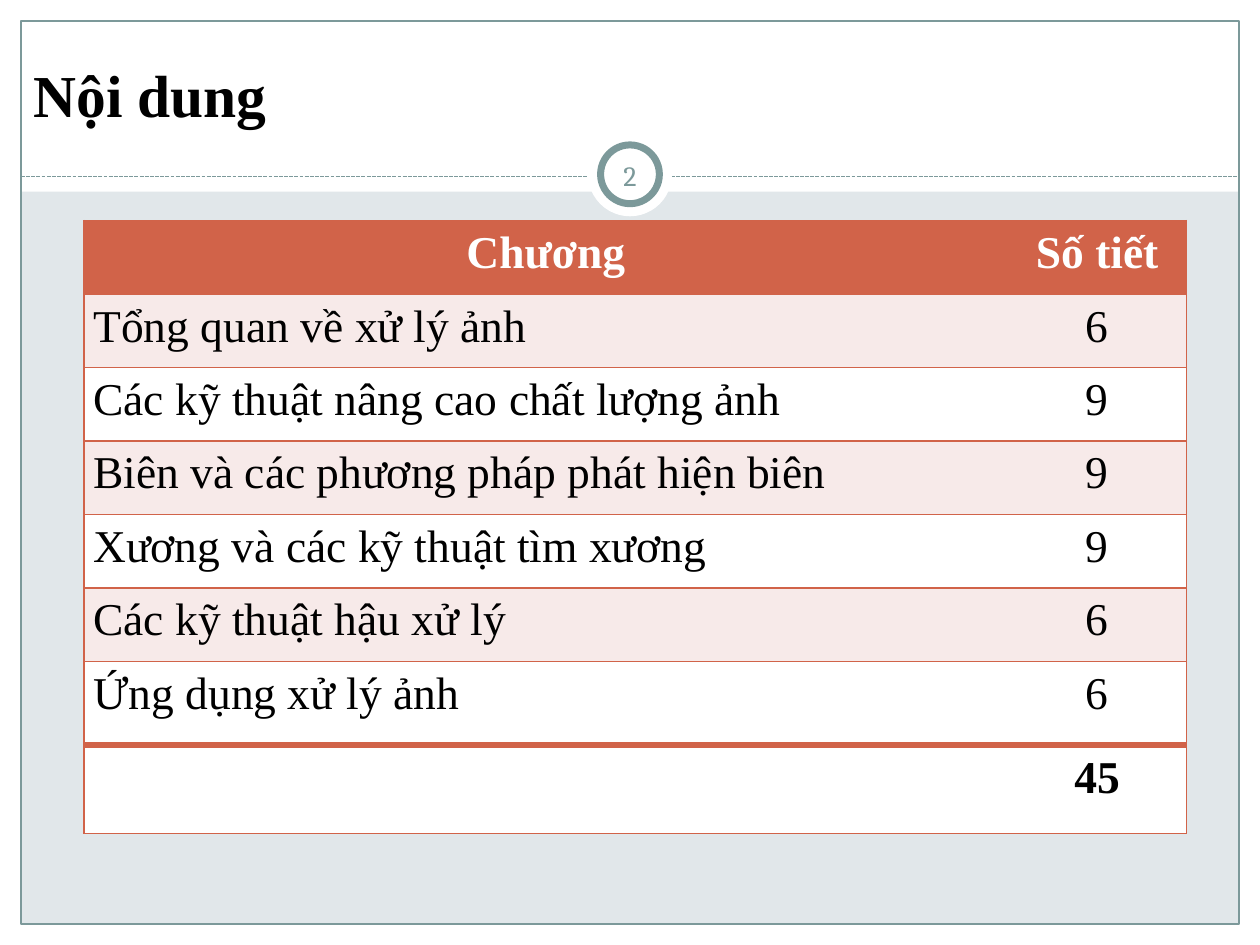
"""Build the course contents slide with its table of chapters and lesson counts."""
import dataclasses

import lxml.etree
import pptx
import pptx.dml.color
import pptx.enum.dml
import pptx.enum.shapes
import pptx.enum.text
import pptx.oxml.ns
import pptx.util

Pt = pptx.util.Pt
RGBColor = pptx.dml.color.RGBColor
Align = pptx.enum.text.PP_ALIGN
Anchor = pptx.enum.text.MSO_ANCHOR
Kind = pptx.enum.shapes.MSO_SHAPE
qn = pptx.oxml.ns.qn


@dataclasses.dataclass(frozen=True)
class Theme:
    background: str = "E1E7EA"
    white: str = "FFFFFF"
    black: str = "000000"
    frame: str = "7C999A"
    accent: str = "D16349"
    band: str = "F7EAE9"
    font: str = "Times New Roman"
    number_font: str = "Cambria"
    title_size: float = 34
    table_size: float = 26
    number_size: float = 16


theme = Theme()


def format_text(text_frame, font, size, color, bold, alignment):
    paragraph = text_frame.paragraphs[0]
    paragraph.alignment = alignment
    for run in paragraph.runs:
        run.font.name = font
        run.font.size = Pt(size)
        run.font.bold = bold
        run.font.color.rgb = RGBColor.from_string(color)
    return paragraph


def set_borders(cell, widths):
    properties = cell._tc.get_or_add_tcPr()
    for position, (side, width) in enumerate(widths.items()):
        line = lxml.etree.Element(qn(f"a:ln{side}"), w=str(Pt(width)))
        properties.insert(position, line)
        if width:
            fill = lxml.etree.SubElement(line, qn("a:solidFill"))
            lxml.etree.SubElement(fill, qn("a:srgbClr"), val=theme.accent)
        else:
            lxml.etree.SubElement(line, qn("a:noFill"))


presentation = pptx.Presentation()
presentation.slide_width = Pt(720)
presentation.slide_height = Pt(540)
slide = presentation.slides.add_slide(presentation.slide_layouts[5])
slide.background.fill.solid()
slide.background.fill.fore_color.rgb = RGBColor.from_string(theme.background)

decorations = [
    (Kind.RECTANGLE, (0, 528, 720, 12), theme.white, 0),
    (Kind.RECTANGLE, (0, 0, 720, 109.5), theme.white, 0),
    (Kind.RECTANGLE, (0, 0, 12, 540), theme.white, 0),
    (Kind.RECTANGLE, (708, 0, 12, 540), theme.white, 0),
    (Kind.RECTANGLE, (12, 12, 696, 516), None, 0.75),
    (Kind.OVAL, (336, 75.6, 48, 48), theme.white, 0),
    (Kind.OVAL, (343.2, 82.8, 33.6, 33.6), theme.white, 4),
]
for kind, box, fill_color, line_width in decorations:
    if kind == Kind.OVAL and not line_width:
        divider = slide.shapes.add_connector(
            pptx.enum.shapes.MSO_CONNECTOR.STRAIGHT, Pt(12), Pt(100.8), Pt(708), Pt(100.8))
        divider.line.color.rgb = RGBColor.from_string(theme.frame)
        divider.line.width = Pt(0.75)
        divider.line.dash_style = pptx.enum.dml.MSO_LINE.SQUARE_DOT
        lxml.etree.SubElement(divider.element.spPr, qn("a:effectLst"))
    shape = slide.shapes.add_shape(kind, *map(Pt, box))
    shape.shadow.inherit = False
    if fill_color:
        shape.fill.solid()
        shape.fill.fore_color.rgb = RGBColor.from_string(fill_color)
    else:
        shape.fill.background()
    if line_width:
        shape.line.color.rgb = RGBColor.from_string(theme.frame)
        shape.line.width = Pt(line_width)
    else:
        shape.line.fill.background()

title = slide.shapes.title
slide.shapes.element.append(title.element)
title.left, title.top, title.width, title.height = map(Pt, (12, 12, 696, 65.5))
title.text_frame.text = "Nội dung"
title.text_frame.vertical_anchor = Anchor.BOTTOM
format_text(title.text_frame, theme.font, theme.title_size, theme.black, True, Align.LEFT)

chapters = [
    ("Chương", "Số tiết"),
    ("Tổng quan về xử lý ảnh", "6"),
    ("Các kỹ thuật nâng cao chất lượng ảnh", "9"),
    ("Biên và các phương pháp phát hiện biên", "9"),
    ("Xương và các kỹ thuật tìm xương", "9"),
    ("Các kỹ thuật hậu xử lý", "6"),
    ("Ứng dụng xử lý ảnh", "6"),
    ("", "45"),
]
column_widths = [528, 102]
row_heights = [42] * 6 + [48, 50.4]
total_row = len(chapters) - 1
table = slide.shapes.add_table(
    len(chapters), 2, Pt(48), Pt(126), Pt(sum(column_widths)), Pt(sum(row_heights))).table
table.first_row = False
table.horz_banding = False
for column, width in zip(table.columns, column_widths):
    column.width = Pt(width)

for row_index, (values, height) in enumerate(zip(chapters, row_heights)):
    table.rows[row_index].height = Pt(height)
    is_header = row_index == 0
    is_total = row_index == total_row
    if is_header:
        fill_color = theme.accent
    else:
        fill_color = theme.band if row_index % 2 and not is_total else theme.white
    for column_index, value in enumerate(values):
        cell = table.cell(row_index, column_index)
        cell.margin_left = cell.margin_right = Pt(5.4)
        cell.margin_top = cell.margin_bottom = Pt(0)
        cell.fill.solid()
        cell.fill.fore_color.rgb = RGBColor.from_string(fill_color)
        cell.text_frame.text = value
        paragraph = format_text(
            cell.text_frame, theme.font, theme.table_size,
            theme.white if is_header else theme.black, is_header or is_total,
            Align.CENTER if is_header or column_index else Align.LEFT)
        paragraph.line_spacing = 1.15
        set_borders(cell, {
            "L": 0 if column_index else 1,
            "R": 1 if column_index else 0,
            "T": 4 if is_total else 1,
            "B": 4 if row_index == total_row - 1 else 1,
        })

number = slide.shapes.add_textbox(Pt(342), Pt(82.8), Pt(36), Pt(34.5))
number.text_frame.word_wrap = True
number.text_frame.vertical_anchor = Anchor.MIDDLE
number.text_frame.margin_left = number.text_frame.margin_right = Pt(3.6)
number.text_frame.text = "2"
format_text(number.text_frame, theme.number_font, theme.number_size, theme.frame, False, Align.CENTER)

presentation.save("out.pptx")
